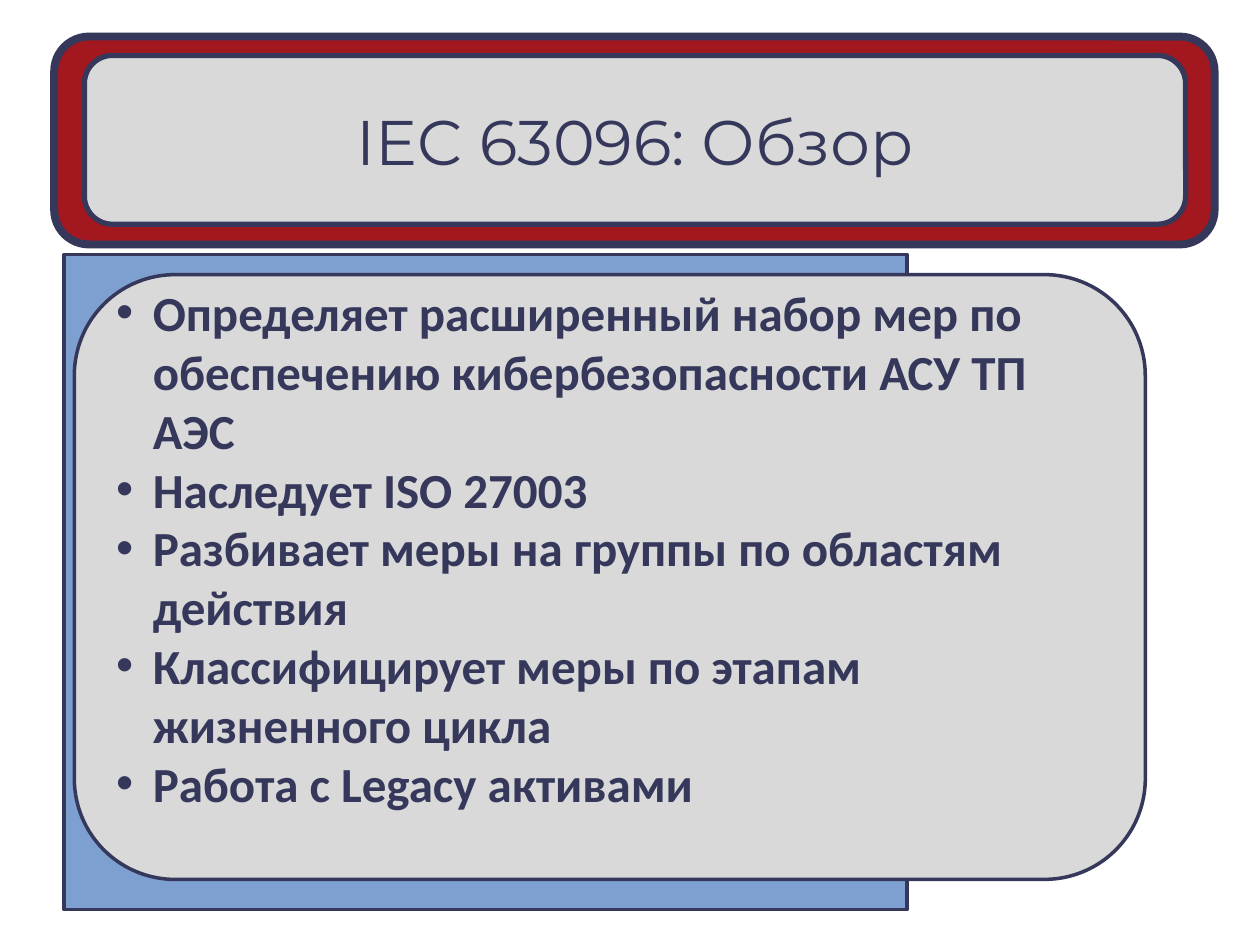
from lxml.etree import SubElement
from pptx import Presentation
from pptx.dml.color import RGBColor
from pptx.enum.shapes import MSO_SHAPE
from pptx.enum.text import MSO_ANCHOR, PP_ALIGN
from pptx.oxml.ns import qn
from pptx.util import Inches, Pt

NAVY = "35385A"
GREY = "D9D9D9"
BLUE = "7DA0D0"
RED = "A3171E"


def rgb(value):
    return RGBColor.from_string(value)


def write(paragraph, text, font="Calibri", size=28, bold=False, align=PP_ALIGN.LEFT, bullet=False):
    paragraph.alignment = align
    run = paragraph.add_run()
    run.text = text
    run.font.name = font
    run.font.size = Pt(size)
    run.font.bold = bold
    run.font.color.rgb = rgb(NAVY)
    if bullet:
        properties = paragraph._p.get_or_add_pPr()
        properties.set("marL", str(Inches(0.29)))
        properties.set("indent", str(Inches(-0.29)))
        SubElement(properties, qn("a:buFont"), typeface="Arial")
        SubElement(properties, qn("a:buChar"), char="•")


presentation = Presentation()
presentation.slide_width = Inches(10)
presentation.slide_height = Inches(7.5)
slide = presentation.slides.add_slide(presentation.slide_layouts[6])

panels = [
    (MSO_SHAPE.RECTANGLE, (0.51, 2.02, 6.69, 5.2), BLUE, 2),
    (MSO_SHAPE.ROUNDED_RECTANGLE, (0.59, 2.18, 8.5, 4.8), GREY, 2),
    (MSO_SHAPE.ROUNDED_RECTANGLE, (0.43, 0.29, 9.21, 1.65), RED, 4.5),
    (MSO_SHAPE.ROUNDED_RECTANGLE, (0.67, 0.44, 8.74, 1.34), GREY, 3),
]
frames = []
for outline, box, fill, line_width in panels:
    panel = slide.shapes.add_shape(outline, *[Inches(length) for length in box])
    panel.shadow.inherit = False
    panel.fill.solid()
    panel.fill.fore_color.rgb = rgb(fill)
    panel.line.color.rgb = rgb(NAVY)
    panel.line.width = Pt(line_width)
    panel.text_frame.word_wrap = True
    panel.text_frame.vertical_anchor = MSO_ANCHOR.MIDDLE
    frames.append(panel.text_frame)
backdrop, overview, title_border, title = frames

write(title.paragraphs[0], "IEC 63096: Обзор", font="Montserrat", size=36, align=PP_ALIGN.CENTER)

points = [
    "Определяет расширенный набор мер по обеспечению кибербезопасности АСУ ТП АЭС",
    "Наследует ISO 27003",
    "Разбивает меры на группы по областям действия",
    "Классифицирует меры по этапам жизненного цикла",
    "Работа с Legacy активами",
]
overview.margin_bottom = Inches(0.52)
for number, point in enumerate(points):
    paragraph = overview.add_paragraph() if number else overview.paragraphs[0]
    write(paragraph, point, bold=True, bullet=True)

presentation.save("out.pptx")
